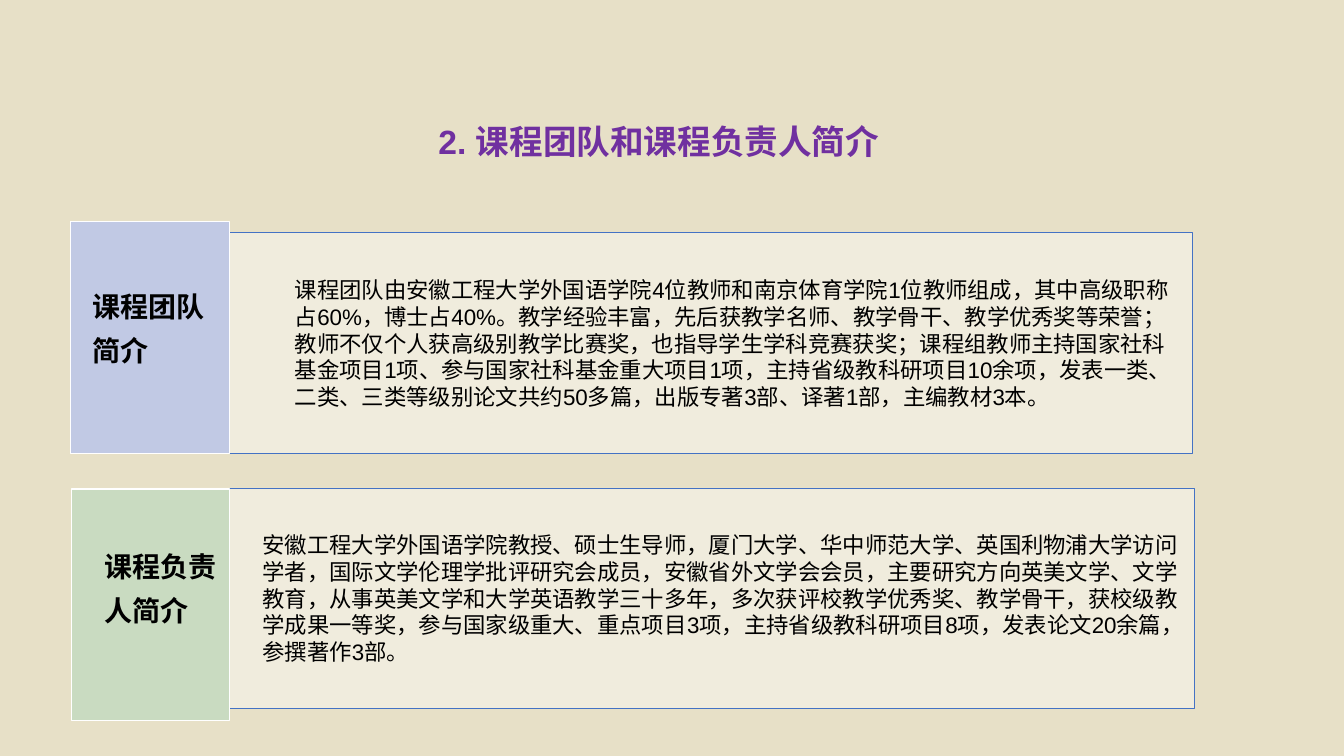
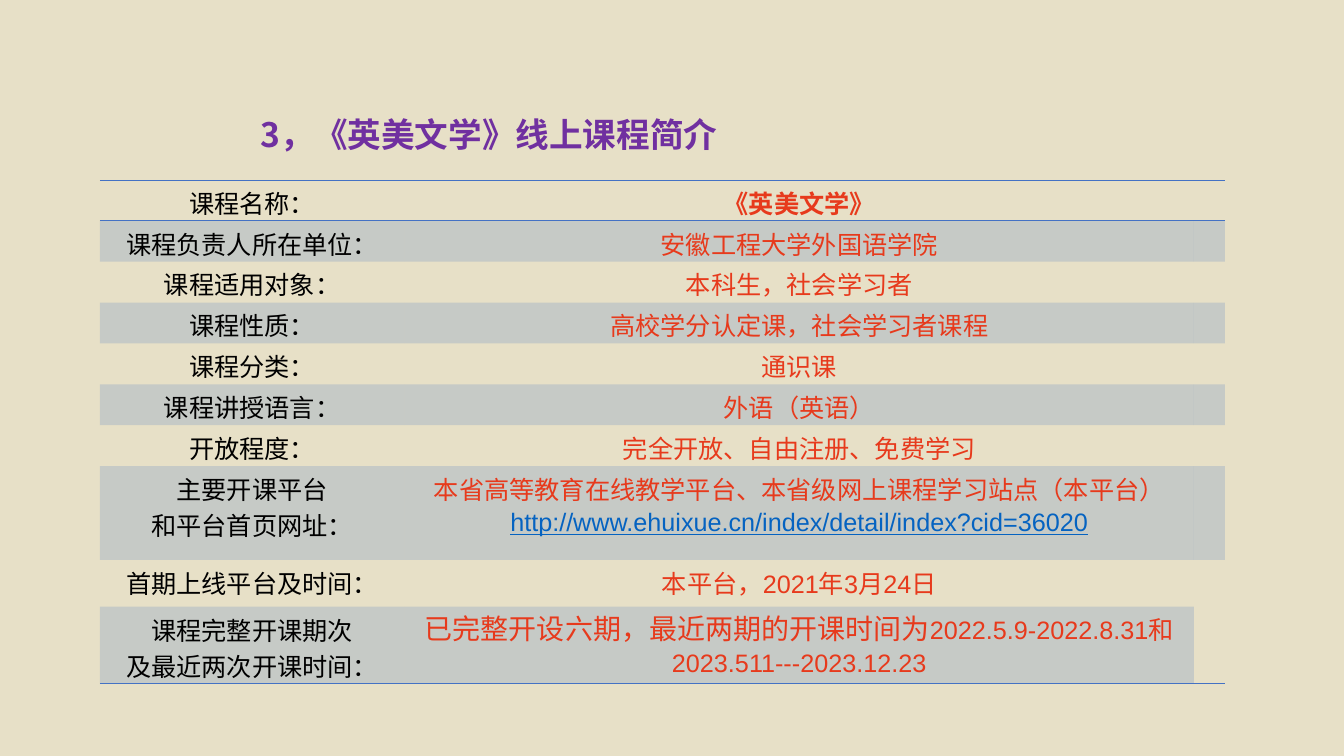
from lxml import etree
from pptx import Presentation
from pptx.dml.color import RGBColor
from pptx.enum import shapes, text
from pptx.oxml import ns
from pptx.util import Pt

SAND = RGBColor(0xE7, 0xE0, 0xC7)
PURPLE = RGBColor(0x70, 0x30, 0xA0)
BLUE = RGBColor(0x44, 0x72, 0xC4)
LINK = RGBColor(0x05, 0x63, 0xC1)
RED = RGBColor(0xE7, 0x3A, 0x1C)
LILAC = RGBColor(0xC1, 0xC9, 0xE4)
GREEN = RGBColor(0xC9, 0xDB, 0xC1)
WHITE = RGBColor(0xFF, 0xFF, 0xFF)
BLACK = RGBColor(0, 0, 0)
LATIN = "Arial"
HAN = "Noto Sans CJK SC"
LEFT, CENTER = text.PP_ALIGN.LEFT, text.PP_ALIGN.CENTER
NO_STYLE = "{2D5ABB26-0587-4C30-8999-92F81FD0307C}"


# Shared helpers
def add_run(para, words, size, color, font=LATIN, bold=False, line=False):
    run = para.add_run()
    run.text = words
    face = run.font
    face.name, face.size, face.bold, face.underline = font, Pt(size), bold, line
    face.color.rgb = color
    east = etree.SubElement(run._r.get_or_add_rPr(), ns.qn("a:ea"))
    east.set("typeface", HAN)


def set_fill(fill, color, alpha=100):
    fill.solid()
    fill.fore_color.rgb = color
    if alpha < 100:
        tone = fill._xPr.find(ns.qn("a:solidFill"))[0]
        etree.SubElement(tone, ns.qn("a:alpha")).set("val", str(alpha * 1000))


def set_frame(frame, anchor, insets=(7.2, 3.6, 7.2, 3.6)):
    frame.word_wrap = True
    frame.auto_size = text.MSO_AUTO_SIZE.NONE
    frame.vertical_anchor = anchor
    (frame.margin_left, frame.margin_top,
     frame.margin_right, frame.margin_bottom) = map(Pt, insets)


def add_title(slide, box, words, font, align):
    title = slide.shapes.title
    title.left, title.top, title.width, title.height = map(Pt, box)
    set_frame(title.text_frame, text.MSO_ANCHOR.MIDDLE)
    para = title.text_frame.paragraphs[0]
    para.alignment = align
    add_run(para, words, 24, PURPLE, font, True)


def add_box(slide, box, color, edge, width, alpha=100):
    shape = slide.shapes.add_shape(shapes.MSO_SHAPE.RECTANGLE, *map(Pt, box))
    shape.shadow.inherit = False
    set_fill(shape.fill, color, alpha)
    shape.line.color.rgb = edge
    shape.line.width = Pt(width)
    return shape


# Profile: a wide panel, a coloured tab over its left end, a heading
def add_profile(slide, panel, tab, head, color, name, words):
    frame = add_box(slide, panel, WHITE, BLUE, 0.5, 40).text_frame
    set_frame(frame, text.MSO_ANCHOR.MIDDLE, (107, 5, 5, 5))
    para = frame.paragraphs[0]
    para.alignment = LEFT
    para.line_spacing = Pt(19.1)
    add_run(para, words, 16, BLACK)

    add_box(slide, tab, color, WHITE, 1)

    x, y = tab[0] + head[0], tab[1] + head[1]
    frame = slide.shapes.add_textbox(Pt(x), Pt(y), Pt(96.5), Pt(70.5)).text_frame
    set_frame(frame, text.MSO_ANCHOR.TOP)
    para = frame.paragraphs[0]
    para.line_spacing = Pt(31.4)
    add_run(para, name, 20, BLACK, HAN, True)


# Table parts
def add_edge(cell, side):
    props = cell._tc.get_or_add_tcPr()
    edge = etree.Element(ns.qn("a:" + side), w="12700")
    tone = etree.SubElement(edge, ns.qn("a:solidFill"))
    etree.SubElement(tone, ns.qn("a:srgbClr")).set("val", str(BLUE))
    props.insert(1 if side == "lnB" and props.find(ns.qn("a:lnT")) is not None
                 else 0, edge)


def fill_cell(cell, lines, pitch):
    """Each line is a list of runs: words, size, colour and options."""
    frame = cell.text_frame
    for i, runs in enumerate(lines):
        para = frame.add_paragraph() if i else frame.paragraphs[0]
        para.alignment = CENTER
        para.line_spacing = Pt(pitch if i else 26)
        for run in runs:
            add_run(para, *run)


def add_facts(slide, box, cols, rows, facts):
    frame = slide.shapes.add_table(len(rows), len(cols), *map(Pt, box))
    table = frame.table
    table.first_row = table.horz_banding = False
    table._tbl.tblPr.find(ns.qn("a:tableStyleId")).text = NO_STYLE
    for col, width in zip(table.columns, cols):
        col.width = Pt(width)
    last = len(rows) - 1
    for i, (high, (names, values)) in enumerate(zip(rows, facts)):
        table.rows[i].height = Pt(high)
        for j in range(len(cols)):
            cell = table.cell(i, j)
            cell.margin_top, cell.margin_bottom = Pt(3), 0
            if i % 2 and (i < last or j < 2):
                set_fill(cell.fill, BLUE, 20)
            else:
                cell.fill.background()
            if i == 0:
                add_edge(cell, "lnT")
            if i in (0, last) or (i == last - 1 and j == 2):
                add_edge(cell, "lnB")
        labels = [[(name, 18, BLACK)] for name in names]
        fill_cell(table.cell(i, 0), labels, 26)
        fill_cell(table.cell(i, 1), values, 21.6)
    table.cell(last - 1, 2).merge(table.cell(last, 2))


# Slides
def team_slide(deck):
    slide = deck.slides.add_slide(deck.slide_layouts[5])
    add_title(slide, (306, 85, 369, 31), "2. 课程团队和课程负责人简介", LATIN, LEFT)
    add_profile(
        slide, (103.7, 166.3, 748, 157.7), (50.5, 158.4, 113.5, 165.6),
        (8.5, 37.5), LILAC, "课程团队简介",
        "课程团队由安徽工程大学外国语学院4位教师和南京体育学院1位教师组成，其中高级职称占60%，"
        "博士占40%。教学经验丰富，先后获教学名师、教学骨干、教学优秀奖等荣誉；教师不仅个人获"
        "高级别教学比赛奖，也指导学生学科竞赛获奖；课程组教师主持国家社科基金项目1项、参与国家"
        "社科基金重大项目1项，主持省级教科研项目10余项，发表一类、二类、三类等级别论文共约50多篇，"
        "出版专著3部、译著1部，主编教材3本。")
    add_profile(
        slide, (80.6, 348.5, 772.6, 157.7), (51, 349.2, 113, 165.6),
        (16.7, 32.4), GREEN, "课程负责人简介",
        "安徽工程大学外国语学院教授、硕士生导师，厦门大学、华中师范大学、英国利物浦大学访问学者，"
        "国际文学伦理学批评研究会成员，安徽省外文学会会员，主要研究方向英美文学、文学教育，"
        "从事英美文学和大学英语教学三十多年，多次获评校教学优秀奖、教学骨干，获校级教学成果一等奖，"
        "参与国家级重大、重点项目3项，主持省级教科研项目8项，发表论文20余篇，参撰著作3部。")


def course_slide(deck):
    slide = deck.slides.add_slide(deck.slide_layouts[5])
    add_title(slide, (107.3, 77.8, 484, 36), "3，《英美文学》线上课程简介", HAN, CENTER)
    plain = [
        ("课程负责人所在单位：", "安徽工程大学外国语学院"),
        ("课程适用对象：", "本科生，社会学习者"),
        ("课程性质：", "高校学分认定课，社会学习者课程"),
        ("课程分类：", "通识课"),
        ("课程讲授语言：", "外语（英语）"),
        ("开放程度：", "完全开放、自由注册、免费学习"),
    ]
    facts = [
        (["课程名称："], [[("《英美文学》", 18, RED, LATIN, True)]]),
        *[([name], [[(value, 18, RED)]]) for name, value in plain],
        (["主要开课平台", "和平台首页网址："],
         [[("本省高等教育在线教学平台、本省级网上课程学习站点（本平台）", 18, RED, HAN)],
          [("http://www.ehuixue.cn/index/detail/index?cid=36020",
            18, LINK, LATIN, False, True)]]),
        (["首期上线平台及时间："], [[("本平台，2021年3月24日", 18, RED)]]),
        (["课程完整开课期次", "及最近两次开课时间："],
         [[("已完整开设六期，最近两期的开课时间为", 20, RED),
           ("2022.5.9-2022.8.31和", 18, RED)],
          [("2023.511---2023.12.23", 18, RED)]]),
    ]
    rows = [29, *[29.2] * 6, 67, 33.5, 52.5]
    cols = [217.6, 564, 22]
    add_facts(slide, (71.3, 128.7, sum(cols), sum(rows)), cols, rows, facts)


def main():
    deck = Presentation()
    deck.slide_width, deck.slide_height = Pt(960), Pt(540)
    set_fill(deck.slide_master.background.fill, SAND)
    team_slide(deck)
    course_slide(deck)
    deck.save("out.pptx")


if __name__ == "__main__":
    main()
